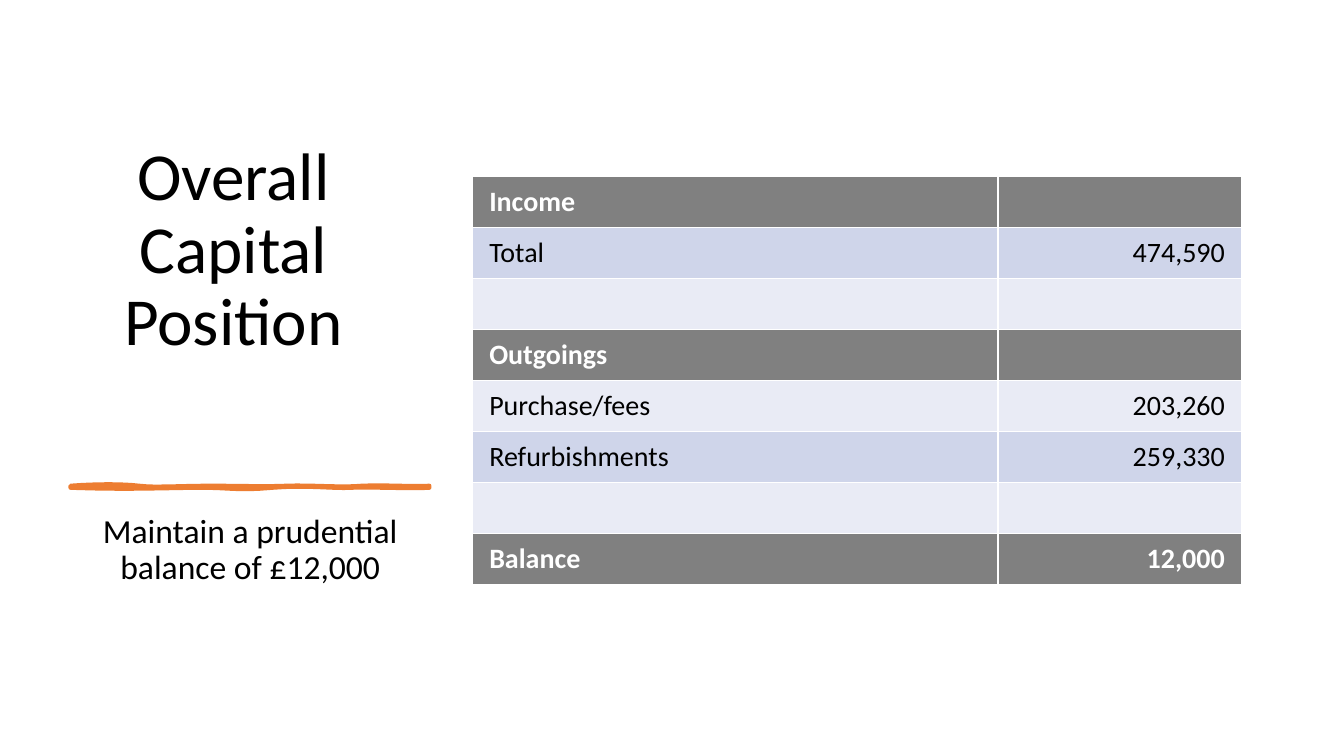
from pptx import Presentation
from pptx import util as u
from pptx.dml.color import RGBColor
from pptx.enum import text
from pptx.oxml.xmlchemy import OxmlElement

FONT = "Calibri"
BLACK, WHITE, ORANGE = "000000", "FFFFFF", "ED7D31"
GREY, BAND_DARK, BAND_LIGHT = "808080", "CFD5EA", "E9EBF5"

ROWS = [
    ("Income", "", GREY),
    ("Total", "474,590", BAND_DARK),
    ("", "", BAND_LIGHT),
    ("Outgoings", "", GREY),
    ("Purchase/fees", "203,260", BAND_LIGHT),
    ("Refurbishments", "259,330", BAND_DARK),
    ("", "", BAND_LIGHT),
    ("Balance", "12,000", GREY),
]

# Bezier segments (two controls, end) in points, from the top left of the stroke
BRUSH_CURVES = [
    ((19.4, -1.4), (36.7, -1.4), (49, 0)),
    ((61.2, 1.4), (77, 0), (100.1, 0)),
    ((123.1, 0), (136.8, 0.7), (154.1, 0)),
    ((171.4, -0.7), (193.7, 1.4), (208.1, 0)),
    ((222.5, -0.7), (246.2, 0.7), (256.3, 0)),
    ((256.3, 0.7), (256.3, 1.4), (256.3, 1.4)),
    ((243.4, 2.2), (211.7, 0.7), (200.2, 1.4)),
    ((188.6, 2.2), (168.5, -0.7), (144, 1.4)),
    ((118.8, 3.6), (115.9, 1.4), (92.9, 1.4)),
    ((69.1, 1.4), (44.6, 2.9), (0, 1.4)),
]


def color(value):
    return RGBColor.from_string(value)


def style_paragraph(paragraph, size, alignment, value=BLACK, bold=False):
    paragraph.alignment = alignment
    font = paragraph.font
    font.name, font.size, font.bold = FONT, u.Pt(size), bold
    font.color.rgb = color(value)


def fill_placeholder(shape, box, words, size, anchor):
    shape.left, shape.top, shape.width, shape.height = map(u.Pt, box)
    frame = shape.text_frame
    frame.text = words
    frame.word_wrap = True
    frame.auto_size = text.MSO_AUTO_SIZE.NONE
    frame.vertical_anchor = anchor
    paragraph = frame.paragraphs[0]
    properties = paragraph._p.get_or_add_pPr()
    properties.set("marL", "0")
    properties.set("indent", "0")
    properties.append(OxmlElement("a:buNone"))
    paragraph.line_spacing = 0.9
    paragraph.space_before = u.Pt(0)
    style_paragraph(paragraph, size, text.PP_ALIGN.CENTER)
    return frame


def curve_points(start, curves, steps=8):
    """Sample a chain of cubic Bezier curves."""
    points = []
    for first, second, end in curves:
        for step in range(1, steps + 1):
            t = step / steps
            weights = ((1 - t) ** 3, 3 * t * (1 - t) ** 2, 3 * t * t * (1 - t), t ** 3)
            knots = (start, first, second, end)
            points.append(tuple(sum(w * knot[axis] for w, knot in zip(weights, knots))
                                for axis in (0, 1)))
        start = end
    return points


def add_brush_stroke(slide, left, top):
    points = [(u.Pt(left + x), u.Pt(top + y)) for x, y in curve_points((0, 0), BRUSH_CURVES)]
    builder = slide.shapes.build_freeform(u.Pt(left), u.Pt(top))
    builder.add_line_segments(points, close=True)
    stroke = builder.convert_to_shape()
    stroke.shadow.inherit = False
    stroke.fill.background()
    stroke.line.color.rgb = color(ORANGE)
    stroke.line.width = u.Pt(3)


def add_capital_table(slide, box, label_share):
    left, top, width, height = box
    table = slide.shapes.add_table(len(ROWS), 2, *map(u.Pt, box)).table
    table.columns[0].width = u.Pt(width * label_share)
    table.columns[1].width = u.Pt(width * (1 - label_share))
    for row, (label, amount, fill) in zip(table.rows, ROWS):
        row.height = u.Pt(height / len(ROWS))
        heading = fill == GREY
        alignments = (text.PP_ALIGN.LEFT, text.PP_ALIGN.RIGHT)
        for cell, words, alignment in zip(row.cells, (label, amount), alignments):
            cell.fill.solid()
            cell.fill.fore_color.rgb = color(fill)
            cell.margin_left = cell.margin_right = u.Pt(12)
            cell.margin_top = cell.margin_bottom = u.Pt(5.8)
            cell.text = words
            style_paragraph(cell.text_frame.paragraphs[0], 20, alignment,
                            WHITE if heading else BLACK, heading)


def build_capital_slide(presentation):
    slide = presentation.slides.add_slide(presentation.slide_layouts[1])
    title, body = slide.placeholders
    frame = fill_placeholder(title, (26, 51, 281.5, 281.5), "Overall Capital\vPosition",
                             48, text.MSO_ANCHOR.BOTTOM)
    frame.margin_bottom = u.Pt(75)
    fill_placeholder(body, (38, 363.6, 281.5, 123), "Maintain a prudential balance of £12,000",
                     24, text.MSO_ANCHOR.TOP)
    add_brush_stroke(slide, 50.4, 347)
    add_capital_table(slide, (337.5, 126.3, 549.5, 291.2), 0.683)


def main():
    presentation = Presentation()
    presentation.slide_width, presentation.slide_height = u.Pt(960), u.Pt(540)
    build_capital_slide(presentation)
    presentation.save("out.pptx")


if __name__ == "__main__":
    main()
